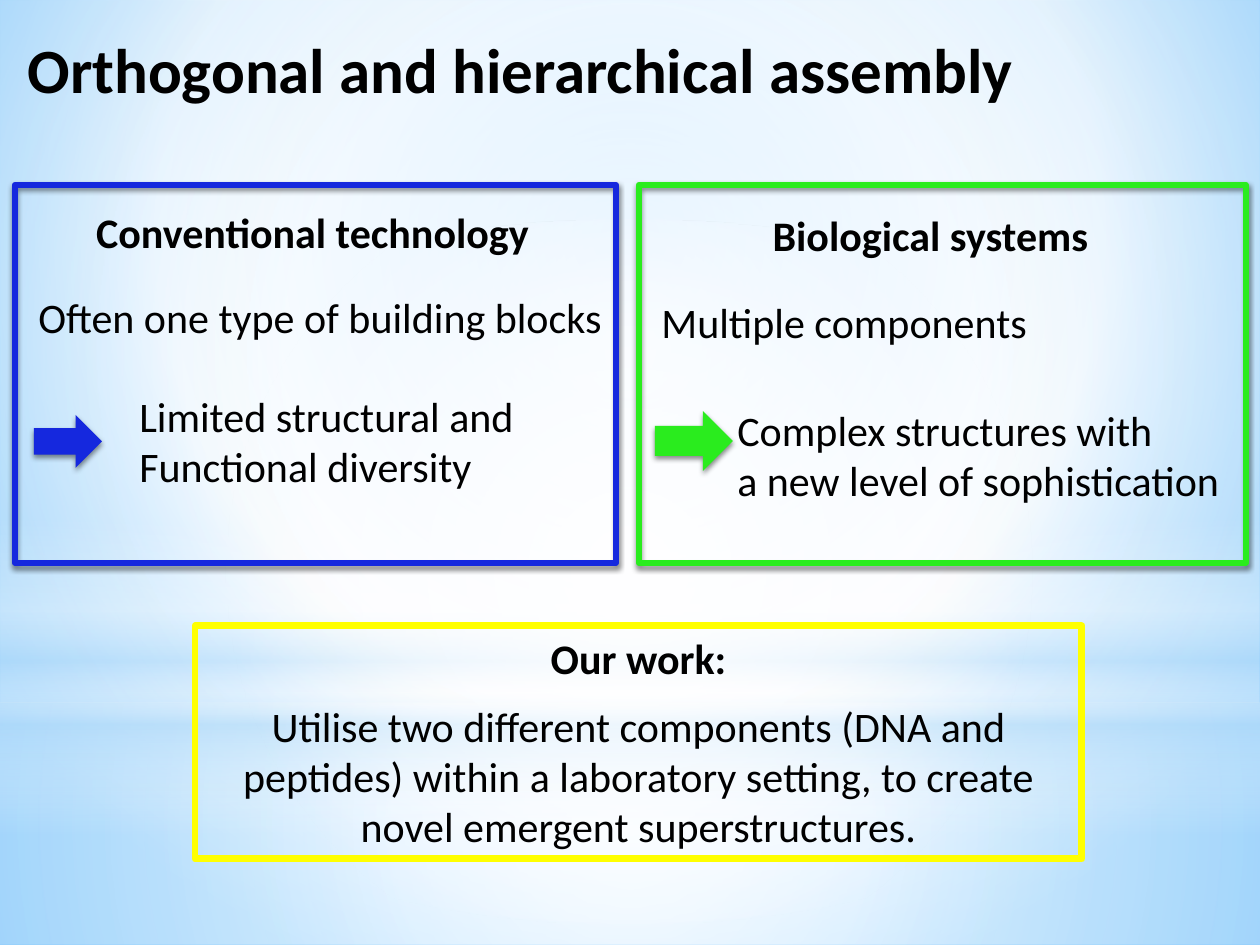
from dataclasses import dataclass

from lxml import etree
from pptx import Presentation
from pptx.dml.color import RGBColor
from pptx.enum.shapes import MSO_SHAPE
from pptx.enum.text import MSO_ANCHOR, PP_ALIGN
from pptx.oxml import parse_xml
from pptx.oxml.ns import nsdecls, qn
from pptx.util import Emu, Pt


@dataclass(frozen=True)
class Theme:
    font: str = "Calibri"
    text: str = "000000"
    conventional: str = "1528DE"
    biological: str = "2AEC1E"
    work: str = "FFFF00"
    title_size: int = 36
    body_size: int = 24
    panel_line: float = 3.5
    work_line: float = 4


THEME = Theme()
PX = 914400 / 126
SLIDE = (1260, 945)

TITLE = ("Orthogonal and hierarchical assembly", (15, 24, 1230, 89))
PANELS = [
    {
        "color": THEME.biological,
        "frame": (639, 185, 607, 378),
        "heading": ("Biological systems", (667, 203, 527, 63)),
        "fact": ("Multiple components", (649, 290, 396, 63)),
        "arrow": (655, 411, 78, 60),
        "outcome": ("Complex structures with\na new level of sophistication",
                    (725, 398, 514, 115)),
    },
    {
        "color": THEME.conventional,
        "frame": (15, 185, 601, 378),
        "heading": ("Conventional technology", (8, 200, 609, 63)),
        "fact": ("Often one type of building blocks", (26, 285, 596, 63)),
        "arrow": (34, 415, 68, 53),
        "outcome": ("Limited structural and\nFunctional diversity",
                    (127, 384, 406, 115)),
    },
]
WORK = (
    "Our work:\nUtilise two different components (DNA and peptides) within a "
    "laboratory setting, to create novel emergent superstructures.",
    (195, 626, 887, 233),
)

# Gradient stops: position %, colour, opacity %. Focus: left, top, right, bottom %.
CENTRE = (50, 50, 50, 50)
BACKDROP = ([(0, "9ED5FF", 100), (60, "FFFFFF", 100), (100, "5BB9FF", 100)],
            (20, 10, 20, 60))
GLOWS = [
    (MSO_SHAPE.RECTANGLE, (0, 703, 1260, 242),
     [(0, "FFFFFF", 91), (37, "FFFFFF", 76), (100, "B4DCFA", 79)], CENTRE),
    (MSO_SHAPE.RECTANGLE, (0, 0, 1260, 703),
     [(0, "FFFFFF", 89), (48, "FFFFFF", 62), (100, "B4DCFA", 79)], CENTRE),
    (MSO_SHAPE.RECTANGLE, (0, 519, 1260, 315),
     [(0, "FFFFFF", 0), (29, "FFFFFF", 30), (45, "B4DCFA", 40),
      (55, "FFFFFF", 26), (65, "B4DCFA", 60), (100, "FFFFFF", 0)], None),
    (MSO_SHAPE.OVAL, (0, 220, 1260, 703),
     [(0, "FFFFFF", 100), (56, "FFFFFF", 0)], CENTRE),
]


def emu(box):
    return [Emu(round(length * PX)) for length in box]


def set_gradient(fill, properties, stops, focus):
    """Radial gradient around focus, or a vertical one when focus is None."""
    fill.gradient()
    gradient = properties.find(qn("a:gradFill"))
    stop_xml = "".join(
        f'<a:gs pos="{position * 1000}"><a:srgbClr val="{color}">'
        f'<a:alpha val="{opacity * 1000}"/></a:srgbClr></a:gs>'
        for position, color, opacity in stops)
    if focus:
        edges = " ".join(f'{side}="{value * 1000}"'
                         for side, value in zip("ltrb", focus))
        direction = f'<a:path path="circle"><a:fillToRect {edges}/></a:path>'
    else:
        direction = '<a:lin ang="5400000" scaled="0"/>'
    properties.replace(gradient, parse_xml(
        f'<a:gradFill {nsdecls("a")} rotWithShape="1">'
        f"<a:gsLst>{stop_xml}</a:gsLst>{direction}</a:gradFill>"))


def add_shadow(shape):
    shape.shadow.inherit = False
    effects = shape._element.spPr.find(qn("a:effectLst"))
    shadow = etree.SubElement(effects, qn("a:outerShdw"), blurRad="39370",
                              dist="22860", dir="5400000", rotWithShape="0")
    color = etree.SubElement(shadow, qn("a:srgbClr"), val="000000")
    etree.SubElement(color, qn("a:alpha"), val="45000")


def write(shape, text, size=THEME.body_size, align=PP_ALIGN.LEFT,
          bold=False, wrap=True):
    frame = shape.text_frame
    frame.text = text
    frame.word_wrap = wrap
    for paragraph in frame.paragraphs:
        paragraph.alignment = align
        for run in paragraph.runs:
            run.font.name = THEME.font
            run.font.size = Pt(size)
            run.font.bold = bold
            run.font.color.rgb = RGBColor.from_string(THEME.text)
    return frame


def set_line(shape, color, width):
    shape.line.color.rgb = RGBColor.from_string(color)
    shape.line.width = Pt(width)


def add_backdrop(slide):
    """Background gradient, with the soft glows placed on the layout."""
    fill = slide.background.fill
    fill.gradient()
    properties = slide._element.cSld.find(qn("p:bg")).find(qn("p:bgPr"))
    set_gradient(fill, properties, *BACKDROP)
    for kind, box, stops, focus in GLOWS:
        glow = slide.shapes.add_shape(kind, *emu(box))
        glow.shadow.inherit = False
        glow.line.fill.background()
        set_gradient(glow.fill, glow._element.spPr, stops, focus)
        slide.slide_layout.shapes._spTree.append(glow._element)


def add_panel(shapes, panel):
    heading, heading_box = panel["heading"]
    write(shapes.add_textbox(*emu(heading_box)), heading,
          align=PP_ALIGN.CENTER, bold=True)
    for part in ("fact", "outcome"):
        text, box = panel[part]
        write(shapes.add_textbox(*emu(box)), text, wrap=False)

    frame = shapes.add_shape(MSO_SHAPE.RECTANGLE, *emu(panel["frame"]))
    frame.fill.background()
    set_line(frame, panel["color"], THEME.panel_line)
    add_shadow(frame)

    arrow = shapes.add_shape(MSO_SHAPE.RIGHT_ARROW, *emu(panel["arrow"]))
    arrow.fill.solid()
    arrow.fill.fore_color.rgb = RGBColor.from_string(panel["color"])
    arrow.line.fill.background()
    add_shadow(arrow)


def main():
    presentation = Presentation()
    presentation.slide_width, presentation.slide_height = emu(SLIDE)
    slide = presentation.slides.add_slide(presentation.slide_layouts[5])
    add_backdrop(slide)

    title_text, title_box = TITLE
    title = slide.shapes.title
    title.left, title.top, title.width, title.height = emu(title_box)
    write(title, title_text, THEME.title_size, bold=True)

    for panel in PANELS:
        add_panel(slide.shapes, panel)

    work_text, work_box = WORK
    work = slide.shapes.add_textbox(*emu(work_box))
    set_line(work, THEME.work, THEME.work_line)
    frame = write(work, work_text, align=PP_ALIGN.CENTER)
    frame.vertical_anchor = MSO_ANCHOR.TOP
    work_heading = frame.paragraphs[0]
    work_heading.runs[0].font.bold = True
    work_heading.space_after = Pt(10)

    presentation.save("out.pptx")


if __name__ == "__main__":
    main()
